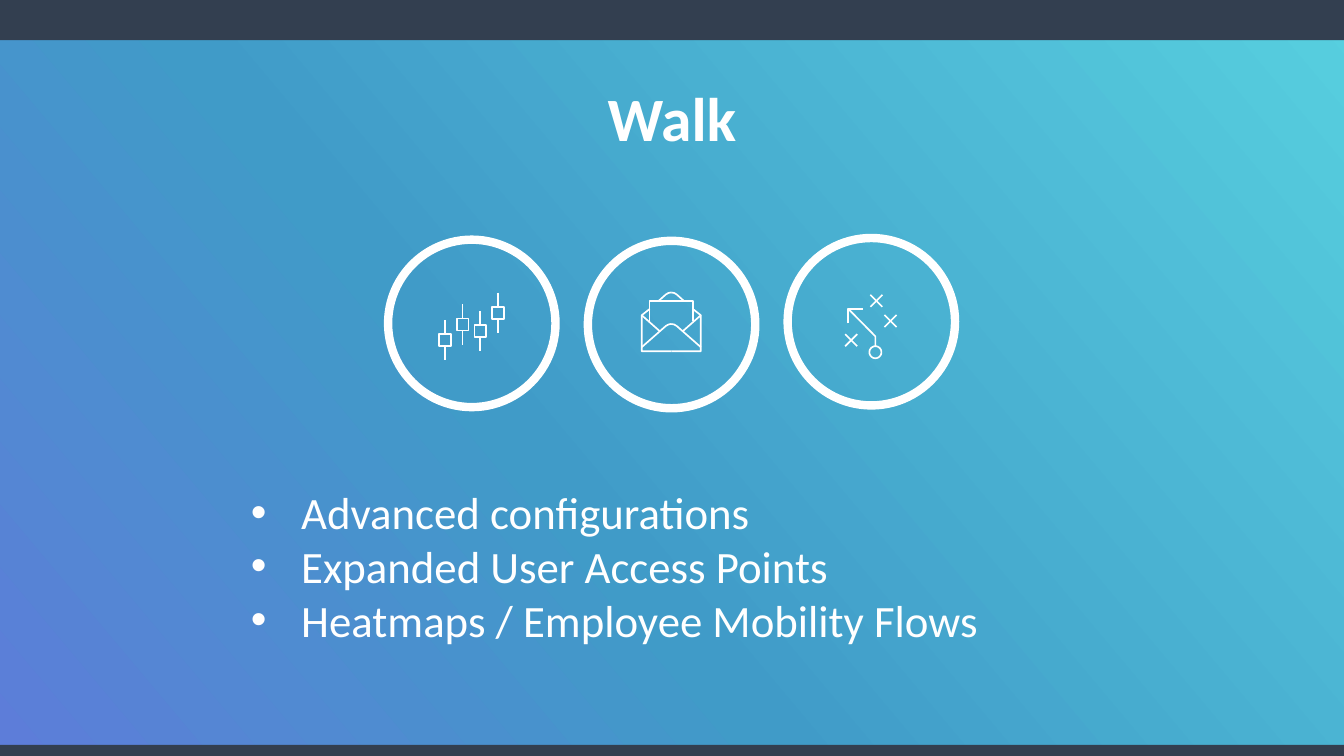
from copy import deepcopy
from math import cos, pi, sin

from lxml.etree import SubElement
from pptx import Presentation
from pptx.dml.color import RGBColor
from pptx.enum.shapes import MSO_SHAPE
from pptx.enum.text import MSO_ANCHOR, PP_ALIGN
from pptx.oxml.ns import qn
from pptx.util import Pt

TITLE = "Walk"
BULLETS = [
    "Advanced configurations",
    "Expanded User Access Points",
    "Heatmaps / Employee Mobility Flows",
]
WIDTH, HEIGHT = 960, 540
FONT, WHITE, SLATE = "Calibri", "FFFFFF", "333F50"
GRADIENT = [(0, "57CFDF"), (0.6, "409BC8"), (1, "5D7DD9")]
BAR_HEIGHT, BAR_TOPS = 28.8, (532, 0)
RING_LEFT, RING_STEP, RING_SIZE = 277.2, 142.7, 119.6
RING_TOPS = (171.2, 172, 170)

CANDLE_LEFT, CANDLE_STEP = 317.9, 12.6
CANDLE_MIDDLES = (242.9, 231.8, 236.5, 223.5)
WICK_HALF, BODY_HALF = 14.4, 4.2

ENVELOPE_MIDDLE = 479.5
ENVELOPE_HALVES = [  # left halves, each mirrored about the middle
    [(479.5, 250.9), (458.4, 250.9), (458.4, 225.2), (464, 220.8)],
    [(458.4, 225.2), (471.3, 236.6)],
    [(464, 229.4), (464, 215.2), (479.5, 215.2)],
    [(458.4, 248), (475.6, 232.9), (477.4, 231.8), (479.5, 231.4)],
    [(470.2, 215.2), (475.6, 210.4), (477.4, 209.3), (479.5, 208.9)],
]

CROSS_CENTERS = [(626, 214.9), (636.1, 229.3), (608, 243)]
CROSS_HALF = 4.3
ARROW = [
    [(625.3, 247.3), (625.3, 240.3), (605.9, 220.6)],
    [(605.9, 231), (605.9, 220.6), (616.3, 220.6)],
]
BALL_X, BALL_Y, BALL_RADIUS = 625.3, 251.6, 4.3


def color(hex_code):
    return RGBColor.from_string(hex_code)


def add_preset(page, kind, left, top, width, height):
    shape = page.shapes.add_shape(kind, Pt(left), Pt(top), Pt(width), Pt(height))
    shape.shadow.inherit = False
    return shape


def outline(shape, weight):
    shape.shadow.inherit = False
    shape.fill.background()
    shape.line.color.rgb = color(WHITE)
    shape.line.width = Pt(weight)


def add_icon(page, strokes):
    """Draw all strokes (lists of points) as one line-art freeform."""
    paths = [[(Pt(x), Pt(y)) for x, y in stroke] for stroke in strokes]
    builder = page.shapes.build_freeform(*paths[0][0])
    builder.add_line_segments(paths[0][1:], close=False)
    for first, *rest in paths[1:]:
        builder.move_to(*first)
        builder.add_line_segments(rest, close=False)
    outline(builder.convert_to_shape(), 1.2)


def candle_strokes():
    strokes = []
    for index, middle in enumerate(CANDLE_MIDDLES):
        x = CANDLE_LEFT + index * CANDLE_STEP
        left, right = x - BODY_HALF, x + BODY_HALF
        top, bottom = middle - BODY_HALF, middle + BODY_HALF
        strokes += [
            [(x, middle - WICK_HALF), (x, top)],
            [(left, top), (right, top), (right, bottom), (left, bottom), (left, top)],
            [(x, bottom), (x, middle + WICK_HALF)],
        ]
    return strokes


def envelope_strokes():
    mirrored = [[(2 * ENVELOPE_MIDDLE - x, y) for x, y in half] for half in ENVELOPE_HALVES]
    return ENVELOPE_HALVES + mirrored


def tactic_strokes():
    crosses = [
        [(x - CROSS_HALF, y - CROSS_HALF * way), (x + CROSS_HALF, y + CROSS_HALF * way)]
        for x, y in CROSS_CENTERS
        for way in (1, -1)
    ]
    ball = [
        (BALL_X + BALL_RADIUS * cos(step * pi / 16), BALL_Y + BALL_RADIUS * sin(step * pi / 16))
        for step in range(33)
    ]
    return crosses + ARROW + [ball]


def paint_background(page):
    fill = page.background.fill
    fill.gradient()
    fill.gradient_angle = 220
    stop_list = page.element.find(".//" + qn("a:gsLst"))
    stop_list.append(deepcopy(stop_list[0]))
    for stop, (position, hex_code) in zip(fill.gradient_stops, GRADIENT):
        stop.position = position
        stop.color.rgb = color(hex_code)


def add_text(page, left, top, width, height, lines, size):
    box = page.shapes.add_textbox(Pt(left), Pt(top), Pt(width), Pt(height))
    frame = box.text_frame
    frame.word_wrap = True
    frame.text = "\n".join(lines)
    for para in frame.paragraphs:
        para.font.name = FONT
        para.font.size = Pt(size)
        para.font.color.rgb = color(WHITE)
    return frame


def add_bullet(para):
    properties = para._p.get_or_add_pPr()
    properties.set("marL", str(Pt(36)))
    properties.set("indent", str(-Pt(36)))
    font = SubElement(properties, qn("a:buFont"))
    font.set("typeface", "Arial")
    SubElement(properties, qn("a:buChar")).set("char", "•")
    properties.insert(0, font)
    properties.insert(1, properties[-1])


def main():
    deck = Presentation()
    deck.slide_width, deck.slide_height = Pt(WIDTH), Pt(HEIGHT)
    page = deck.slides.add_slide(deck.slide_layouts[6])
    paint_background(page)

    for top in BAR_TOPS:
        bar = add_preset(page, MSO_SHAPE.RECTANGLE, 0, top, WIDTH, BAR_HEIGHT)
        bar.fill.solid()
        bar.fill.fore_color.rgb = color(SLATE)
        bar.line.fill.background()

    title = add_text(page, 0, 49.7, WIDTH, 67.7, [TITLE], 44)
    title.vertical_anchor = MSO_ANCHOR.MIDDLE
    title.paragraphs[0].alignment = PP_ALIGN.CENTER
    title.paragraphs[0].font.bold = True

    for index, top in enumerate(RING_TOPS):
        left = RING_LEFT + index * RING_STEP
        outline(add_preset(page, MSO_SHAPE.OVAL, left, top, RING_SIZE, RING_SIZE), 6)

    for para in add_text(page, 172.1, 342.7, 703.4, 123.8, BULLETS, 32).paragraphs:
        add_bullet(para)

    for strokes in (candle_strokes(), envelope_strokes(), tactic_strokes()):
        add_icon(page, strokes)
    deck.save("out.pptx")


if __name__ == "__main__":
    main()
